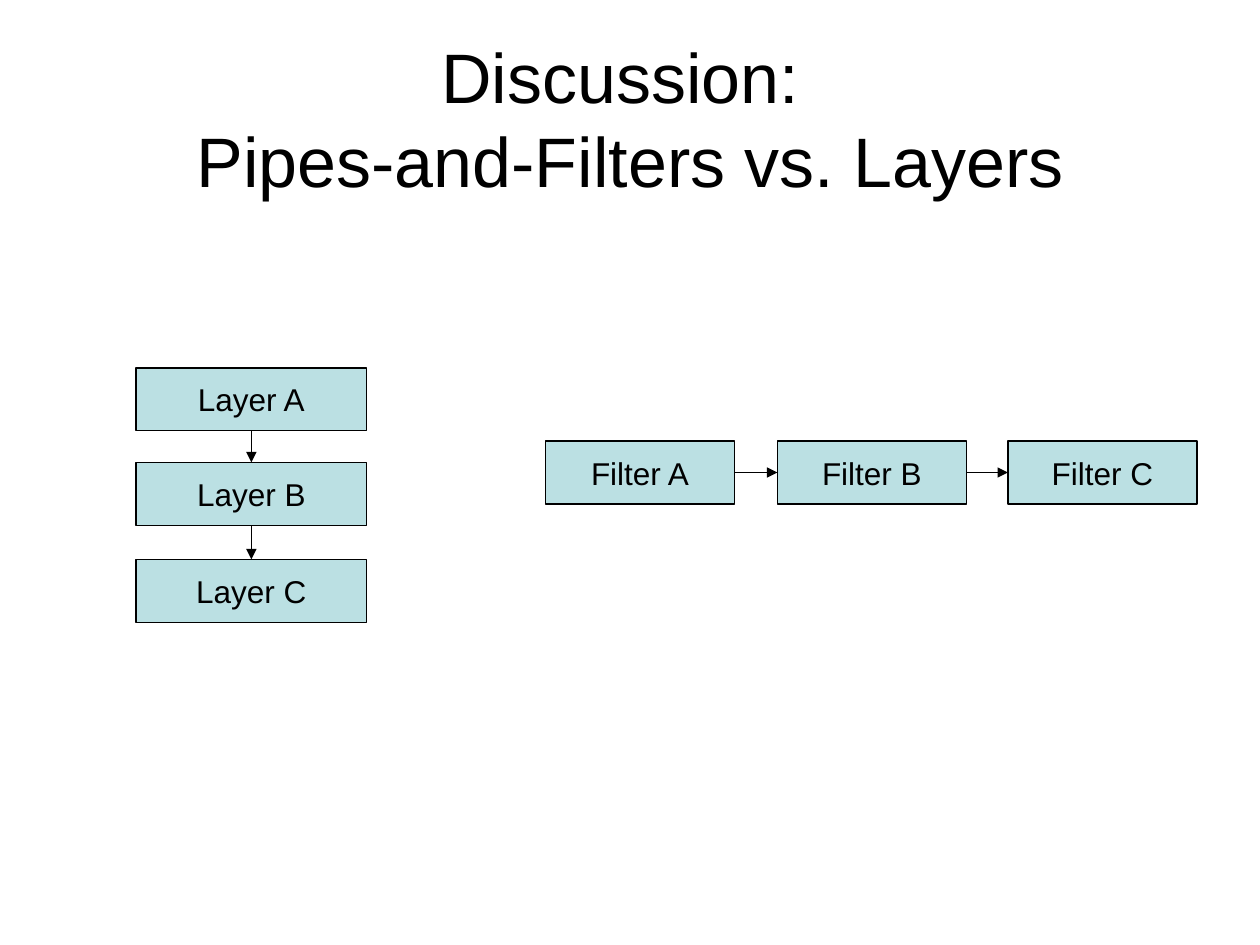
from lxml.etree import SubElement
from pptx import Presentation
from pptx.dml.color import RGBColor
from pptx.enum.shapes import MSO_CONNECTOR, MSO_SHAPE
from pptx.enum.text import MSO_ANCHOR, PP_ALIGN
from pptx.oxml.ns import qn
from pptx.util import Inches, Pt


def color(hex_string):
    return RGBColor.from_string(hex_string)


def add_run(paragraph, text, size):
    paragraph.alignment = PP_ALIGN.CENTER
    run = paragraph.add_run()
    run.text = text
    run.font.name = "Arial"
    run.font.size = Pt(size)
    run.font.color.rgb = color("000000")


prs = Presentation()
prs.slide_width = Inches(10)
prs.slide_height = Inches(7.5)
slide = prs.slides.add_slide(prs.slide_layouts[6])

title = slide.shapes.add_textbox(Inches(0.5), Inches(0.21), Inches(9), Inches(1.44))
title.text_frame.word_wrap = True
title.text_frame.vertical_anchor = MSO_ANCHOR.MIDDLE
heading = title.text_frame.paragraphs[0]
add_run(heading, "Discussion: ", 40)
heading.add_line_break()
add_run(heading, "Pipes-and-Filters vs. Layers", 40)

# Each chain: label, box width, box positions, start side, end side
chains = [
    ("Layer", 1.83, [(1.08, 2.92), (1.08, 3.67), (1.08, 4.44)], 2, 0),
    ("Filter", 1.5, [(4.33, 3.5), (6.17, 3.5), (8, 3.5)], 3, 1),
]

for label, width, positions, start_side, end_side in chains:
    boxes = []
    for letter, (left, top) in zip("ABC", positions):
        box = slide.shapes.add_shape(
            MSO_SHAPE.RECTANGLE, Inches(left), Inches(top), Inches(width), Inches(0.5))
        box.shadow.inherit = False
        box.fill.solid()
        box.fill.fore_color.rgb = color("BBE0E3")
        box.line.color.rgb = color("000000")
        box.line.width = Pt(0.75)
        box.text_frame.word_wrap = False
        box.text_frame.vertical_anchor = MSO_ANCHOR.MIDDLE
        add_run(box.text_frame.paragraphs[0], f"{label} {letter}", 18)
        boxes.append(box)

    for source, target in zip(boxes, boxes[1:]):
        arrow = slide.shapes.add_connector(MSO_CONNECTOR.STRAIGHT, 0, 0, 0, 0)
        arrow.begin_connect(source, start_side)
        arrow.end_connect(target, end_side)
        arrow.line.color.rgb = color("000000")
        arrow.line.width = Pt(0.75)
        SubElement(arrow.line._get_or_add_ln(), qn("a:tailEnd"), type="triangle")
        SubElement(arrow._element.spPr, qn("a:effectLst"))

prs.save("out.pptx")
